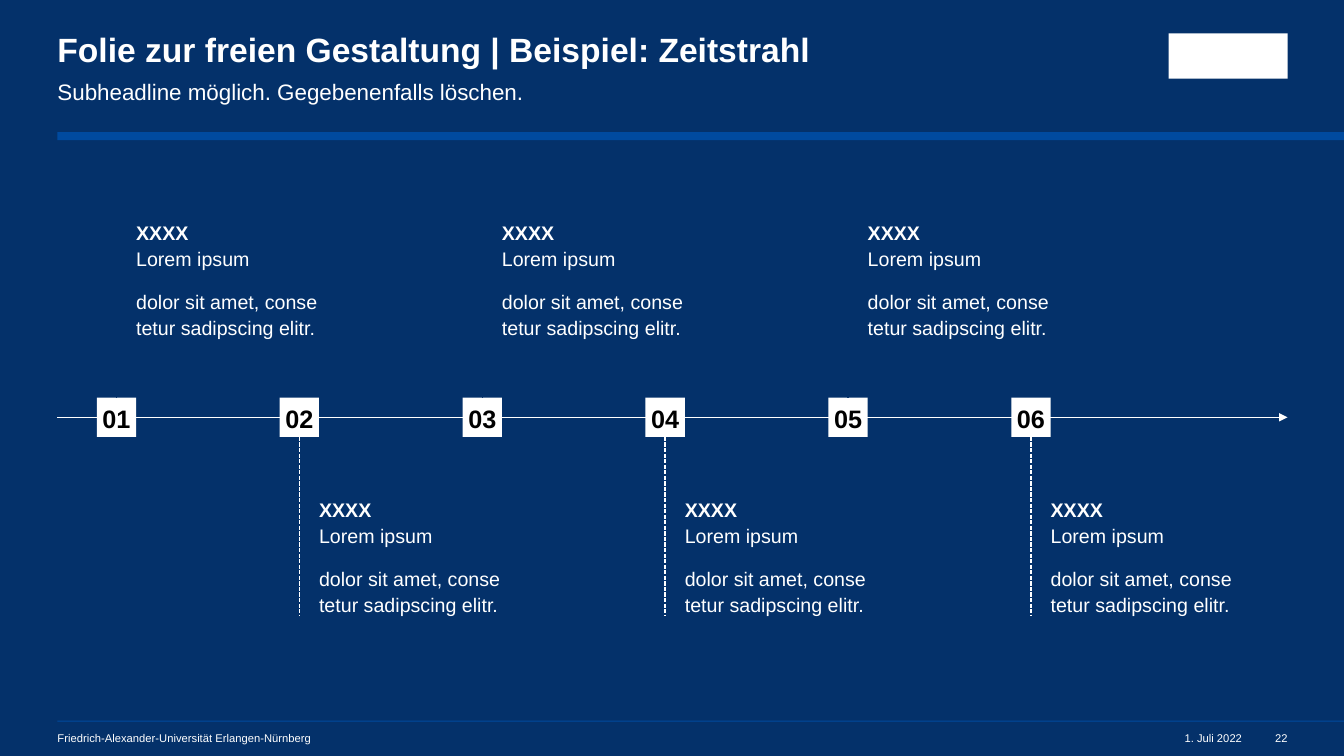
from copy import deepcopy

from lxml import etree
from pptx import Presentation, util as u
from pptx.dml.color import RGBColor
from pptx.enum import dml, shapes, text
from pptx.oxml.ns import qn

# Content
TITLE = "Folie zur freien Gestaltung | Beispiel: Zeitstrahl"
SUBTITLE = "Subheadline möglich. Gegebenenfalls löschen."
FOOTER = "Friedrich-Alexander-Universität Erlangen-Nürnberg"
DATE = "1. Juli 2022"
PAGE_NUMBER = "22"
ENTRY = ["XXXX\vLorem ipsum", "dolor sit amet, conse\vtetur sadipscing elitr."]
STEPS = [(number, ENTRY) for number in ("01", "02", "03", "04", "05", "06")]

COLORS = {"navy": "04316A", "blue": "004A9F", "white": "FFFFFF", "black": "000000"}
FONT = "Arial"

# Layout in inches
WIDTH, HEIGHT = 13.33, 7.5
LEFT, RIGHT = 0.57, 12.77
AXIS_Y = 4.14
MARKER = 0.39
FIRST_X, LAST_X = 0.96, 10.03
ENTRY_W, ENTRY_H = 1.95, 1.18
UPPER_Y, LOWER_Y = 2.17, 4.92
STEM = 1.77


def rgb(name):
    return RGBColor.from_string(COLORS[name])


def write(shape, lines, size, color="white", bold=False, align=text.PP_ALIGN.LEFT,
          spacing=1.0, after=0):
    frame = shape.text_frame
    frame.margin_left = frame.margin_right = frame.margin_top = frame.margin_bottom = 0
    frame.word_wrap = True
    frame.text = "\n".join(lines)
    for para in frame.paragraphs:
        para.alignment = align
        para.line_spacing = spacing
        para.space_before, para.space_after = u.Pt(0), u.Pt(after)
        for span in para.runs:
            span.font.name, span.font.size, span.font.bold = FONT, u.Pt(size), bold
            span.font.color.rgb = rgb(color)
        # Line breaks take the size of the text around them
        for line_break in para._p.findall(qn("a:br")):
            line_break.append(deepcopy(para.runs[0].font._element))
    return frame


def add_text(page, at, lines, size, **style):
    box = page.shapes.add_textbox(*map(u.Inches, at))
    return write(box, lines, size, **style)


def add_rect(page, at, color):
    rect = page.shapes.add_shape(shapes.MSO_SHAPE.RECTANGLE, *map(u.Inches, at))
    rect.shadow.inherit = False
    rect.fill.solid()
    rect.fill.fore_color.rgb = rgb(color)
    rect.line.fill.background()
    return rect


def add_line(page, start, end, color):
    line = page.shapes.add_connector(
        shapes.MSO_CONNECTOR.STRAIGHT, *map(u.Inches, start + end))
    line.line.color.rgb = rgb(color)
    line.line.width = u.Pt(1)
    etree.SubElement(line._element.spPr, qn("a:effectLst"))
    return line


def add_step(page, index, number, entry):
    x = FIRST_X + index * (LAST_X - FIRST_X) / (len(STEPS) - 1)
    top = AXIS_Y - MARKER / 2
    center = x + MARKER / 2
    above = index % 2 == 0

    marker = add_rect(page, (x, top, MARKER, MARKER), "white")
    frame = write(marker, [number], 18, color="black", bold=True,
                  align=text.PP_ALIGN.CENTER, spacing=1.1, after=12)
    frame.vertical_anchor = text.MSO_ANCHOR.MIDDLE

    entry_y = UPPER_Y if above else LOWER_Y
    frame = add_text(page, (x + MARKER, entry_y, ENTRY_W, ENTRY_H), entry, 14,
                     spacing=1.1, after=12)
    frame.paragraphs[0].runs[0].font.bold = True

    start_y = top if above else top + MARKER
    end_y = start_y - STEM if above else start_y + STEM
    stem = add_line(page, (center, start_y), (center, end_y),
                    "navy" if above else "white")
    stem.begin_connect(marker, 0 if above else 2)
    stem.line.dash_style = dml.MSO_LINE.SQUARE_DOT


def main():
    deck = Presentation()
    deck.slide_width, deck.slide_height = u.Inches(WIDTH), u.Inches(HEIGHT)
    page = deck.slides.add_slide(deck.slide_layouts[6])
    page.background.fill.solid()
    page.background.fill.fore_color.rgb = rgb("navy")

    # Rules and emblem block
    add_rect(page, (LEFT, 7.15, WIDTH - LEFT, 0.01), "blue")
    add_rect(page, (LEFT, 1.31, WIDTH - LEFT, 0.08), "blue")
    add_rect(page, (11.59, 0.33, 1.18, 0.45), "white")

    # Header
    add_text(page, (LEFT, 0.33, 7.49, 0.36), [TITLE], 24, bold=True, spacing=0.9)
    add_text(page, (LEFT, 0.75, 7.49, 0.27), [SUBTITLE], 16, spacing=1.1, after=12)

    # Footer
    add_text(page, (LEFT, 7.26, 5.98, 0.13), [FOOTER], 8)
    add_text(page, (11.39, 7.26, 0.93, 0.13), [DATE], 8, align=text.PP_ALIGN.RIGHT)
    add_text(page, (12.56, 7.26, 0.21, 0.13), [PAGE_NUMBER], 8,
             align=text.PP_ALIGN.RIGHT)

    # Timeline
    axis = add_line(page, (LEFT, AXIS_Y), (RIGHT, AXIS_Y), "white")
    etree.SubElement(axis.line._get_or_add_ln(), qn("a:tailEnd"), type="triangle")
    for index, (number, entry) in enumerate(STEPS):
        add_step(page, index, number, entry)

    deck.save("out.pptx")


if __name__ == "__main__":
    main()
